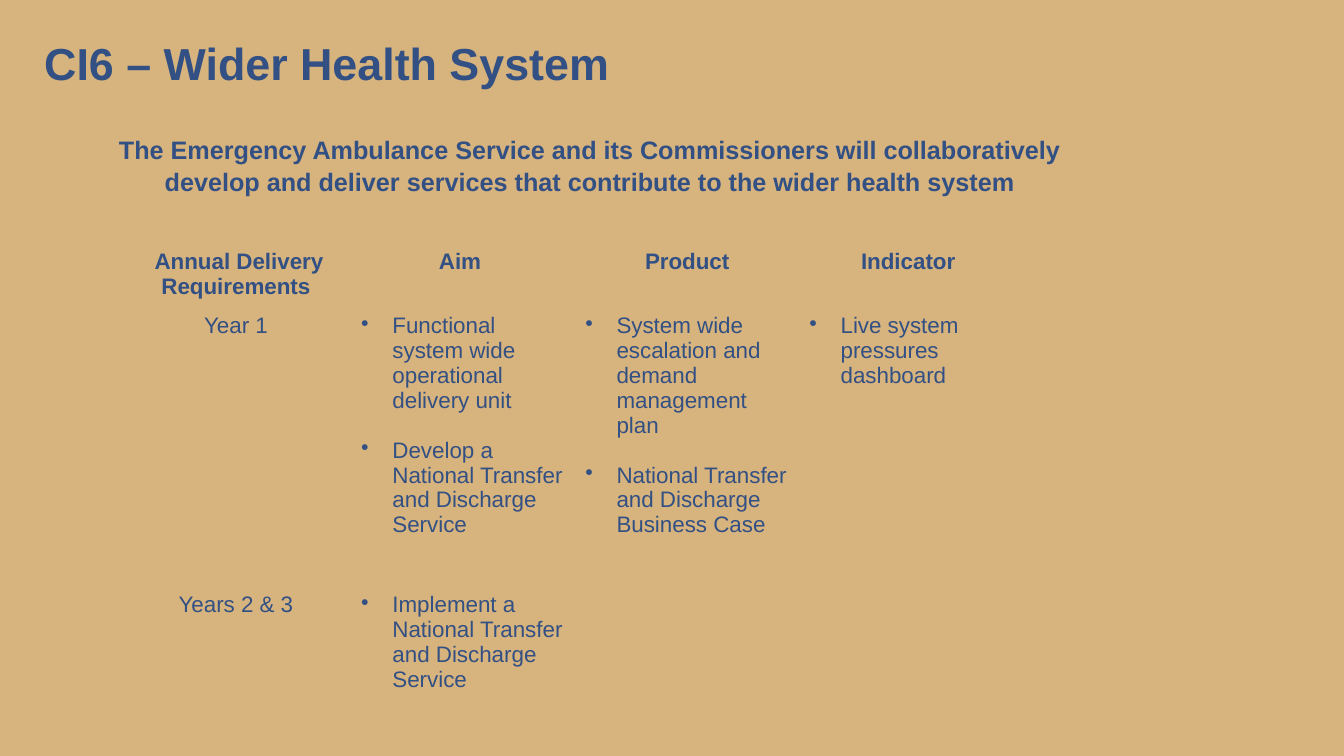
import pptx
import pptx.util
import pptx.dml.color
import pptx.enum.shapes
import pptx.enum.text
import pptx.oxml
import pptx.oxml.ns

Inches, Pt = pptx.util.Inches, pptx.util.Pt
RGB = pptx.dml.color.RGBColor.from_string
ALIGN = pptx.enum.text.PP_ALIGN
ANCHOR = pptx.enum.text.MSO_ANCHOR

HUES = {"sand": "D7B37E", "navy": "325083"}
BASE = {"name": "Arial", "size": Pt(16), "bold": False}
TITLE = {**BASE, "size": Pt(32), "bold": True}
LEAD = {**BASE, "size": Pt(18), "bold": True}
HEAD = {**BASE, "bold": True}

HEADS = ["Annual Delivery Requirements ", "Aim ", "Product", "Indicator "]
YEARS = [
    ("Year 1 ", [
        ["Functional system wide operational delivery unit",
         "Develop a National Transfer and Discharge Service"],
        ["System wide escalation and demand management plan",
         "National Transfer and Discharge Business Case"],
        ["Live system pressures dashboard"],
    ]),
    ("Years 2 & 3 ", [
        ["Implement a National Transfer and Discharge Service"], [], [],
    ]),
]
HEIGHTS = [0.64, 2.77, 1.16]


def style(para, form, align=ALIGN.LEFT):
    for key, value in form.items():
        setattr(para.font, key, value)
    para.font.color.rgb = RGB(HUES["navy"])
    para.alignment = align


def indent(para, left, first=0, mark=None):
    """Set the left and first-line indents and an optional bullet."""
    props = para._p.get_or_add_pPr()
    props.set("marL", str(Inches(left)))
    props.set("indent", str(Inches(first)))
    if mark:
        props.append(pptx.oxml.parse_xml(
            f'<a:buChar {pptx.oxml.ns.nsdecls("a")} char="{mark}"/>'))


def edge(cell, base):
    """Draw the four cell borders; base is the bottom width in points."""
    props = cell._tc.get_or_add_tcPr()
    sides = {"L": 1, "R": 1, "T": 1, "B": base}
    for spot, (side, width) in enumerate(sides.items()):
        props.insert(spot, pptx.oxml.parse_xml(
            f'<a:ln{side} {pptx.oxml.ns.nsdecls("a")} w="{Pt(width)}">'
            f'<a:solidFill><a:srgbClr val="{HUES["sand"]}"/></a:solidFill>'
            f'</a:ln{side}>'))


def add_title(slide, box):
    shape = slide.shapes.add_shape(
        pptx.enum.shapes.MSO_SHAPE.RECTANGLE, *map(Inches, box))
    shape.shadow.inherit = False
    shape.fill.solid()
    shape.fill.fore_color.rgb = RGB(HUES["sand"])
    shape.line.fill.background()
    frame = shape.text_frame
    frame.word_wrap = True
    frame.vertical_anchor = ANCHOR.MIDDLE
    para = frame.paragraphs[0]
    para.text = "CI6 – Wider Health System"
    para.line_spacing = Pt(43)
    style(para, TITLE)


def add_lead(slide, box):
    frame = slide.shapes.add_textbox(*map(Inches, box)).text_frame
    frame.word_wrap = True
    para = frame.paragraphs[0]
    para.text = ("The Emergency Ambulance Service and its Commissioners will "
                 "collaboratively develop and deliver services that "
                 "contribute to the wider health system")
    indent(para, 1)
    para.line_spacing = 1.07
    style(para, LEAD, ALIGN.CENTER)


def fill_list(cell, items):
    frame = cell.text_frame
    for rank, item in enumerate(items):
        para = frame.add_paragraph() if rank else frame.paragraphs[0]
        para.text = item
        indent(para, 0.31, -0.31, "•")
        if rank:
            para.space_before = Pt(17.9)
        style(para, BASE)


def fill_label(cell, text, form):
    para = cell.text_frame.paragraphs[0]
    para.text = text
    style(para, form, ALIGN.CENTER)


def add_plan(slide, box):
    """Place the table of yearly aims, products and indicators."""
    table = slide.shapes.add_table(
        len(HEIGHTS), len(HEADS), *map(Inches, box)).table
    for row, height in zip(table.rows, HEIGHTS):
        row.height = Inches(height)
    for col, text in enumerate(HEADS):
        fill_label(table.cell(0, col), text, HEAD)
    for row, (year, lists) in enumerate(YEARS, 1):
        fill_label(table.cell(row, 0), year, BASE)
        for col, items in enumerate(lists, 1):
            fill_list(table.cell(row, col), items)
    for rank, row in enumerate(table.rows):
        for cell in row.cells:
            cell.fill.background()
            edge(cell, 1 if rank else 3)


def main():
    deck = pptx.Presentation()
    deck.slide_width, deck.slide_height = Inches(13.33), Inches(7.5)
    slide = deck.slides.add_slide(deck.slide_layouts[6])
    slide.background.fill.solid()
    slide.background.fill.fore_color.rgb = RGB(HUES["sand"])
    add_title(slide, (0.34, 0.19, 10.48, 0.8))
    add_lead(slide, (0.06, 1.26, 10.58, 2.52))
    add_plan(slide, (1.26, 2.42, 8.89, sum(HEIGHTS)))
    deck.save("out.pptx")


if __name__ == "__main__":
    main()
